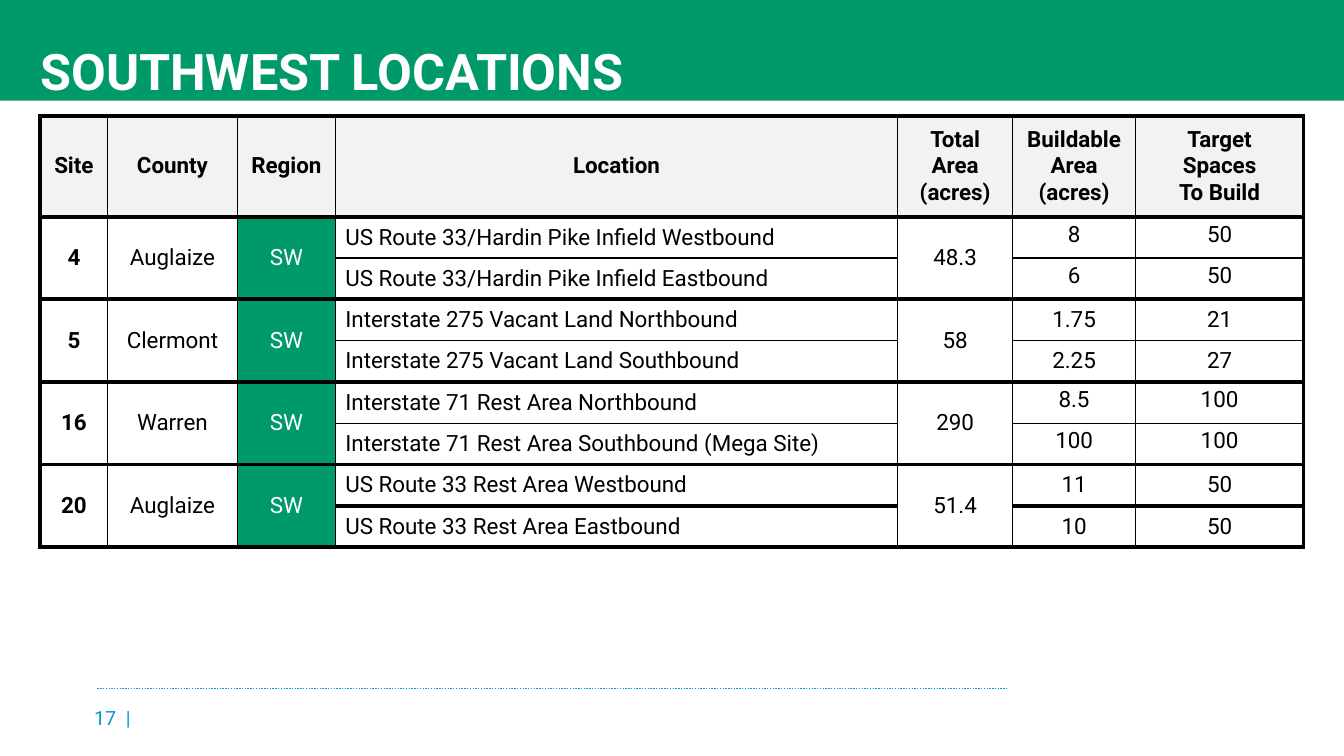
from dataclasses import dataclass

from lxml.etree import SubElement
from pptx import Presentation
from pptx.dml.color import RGBColor
from pptx.enum.dml import MSO_LINE
from pptx.enum.shapes import MSO_CONNECTOR, MSO_SHAPE
from pptx.enum.text import MSO_ANCHOR, PP_ALIGN
from pptx.oxml.ns import qn
from pptx.slide import Slide
from pptx.table import Table, _Cell
from pptx.text.text import TextFrame
from pptx.util import Inches, Pt

GREEN = RGBColor(0x00, 0x99, 0x69)
BLUE = RGBColor(0x00, 0x98, 0xD3)
GREY = RGBColor(0xF2, 0xF2, 0xF2)
BLACK = RGBColor(0, 0, 0)
WHITE = RGBColor(255, 255, 255)
FONT = "Roboto"
WIDE, HIGH = Inches(13.33), Inches(7.5)
COLS, ROWS = 40, 30
THIN, THICK = 1, 3

HEADS = ["Site", "County", "Region", "Location", "Total\nArea (acres)",
         "Buildable\nArea (acres)", "Target\nSpaces\nTo Build"]
SPANS = [2, 3.87, 2.91, 16.74, 3.42, 3.66, 5]
HEAD_ROWS, LOT_ROWS = 4, 1.64
SITE, REGION, PLACE, AREA, BUILD = 0, 2, 3, 4, 5
LAST = len(HEADS) - 1


@dataclass
class Lot:
    place: str
    acres: str
    spaces: str


@dataclass
class Site:
    number: str
    county: str
    area: str
    lots: list[Lot]
    anchor: MSO_ANCHOR = MSO_ANCHOR.MIDDLE
    split: int = THIN


SITES = [
    Site("4", "Auglaize", "48.3",
         [Lot("US Route 33/Hardin Pike Infield Westbound", "8", "50"),
          Lot("US Route 33/Hardin Pike Infield Eastbound", "6", "50")],
         anchor=MSO_ANCHOR.TOP),
    Site("5", "Clermont", "58",
         [Lot("Interstate 275 Vacant Land Northbound", "1.75", "21"),
          Lot("Interstate 275 Vacant Land Southbound", "2.25", "27")]),
    Site("16", "Warren", "290",
         [Lot("Interstate 71 Rest Area Northbound", "8.5", "100"),
          Lot("Interstate 71 Rest Area Southbound (Mega Site)", "100", "100")],
         anchor=MSO_ANCHOR.TOP),
    Site("20", "Auglaize", "51.4",
         [Lot("US Route 33 Rest Area Westbound", "11", "50"),
          Lot("US Route 33 Rest Area Eastbound", "10", "50")],
         split=THICK),
]


def across(cols: float) -> int:
    return round(WIDE * cols / COLS)


def down(rows: float) -> int:
    return round(HIGH * rows / ROWS)


def write(frame: TextFrame, text: str, size: int, color: RGBColor,
          bold: bool = False, align: PP_ALIGN = PP_ALIGN.LEFT) -> None:
    frame.text = text
    for para in frame.paragraphs:
        para.alignment = align
        for run in para.runs:
            font = run.font
            font.name, font.size, font.bold = FONT, Pt(size), bold
            font.color.rgb = color


def edge(cell: _Cell, col: int, top: int, base: int) -> None:
    """Draw the four borders; the table's outer sides are thick."""
    props = cell._tc.get_or_add_tcPr()
    left = THICK if col == SITE else THIN
    right = THICK if col == LAST else THIN
    sides = {"a:lnL": left, "a:lnR": right, "a:lnT": top, "a:lnB": base}
    for at, (tag, width) in enumerate(sides.items()):
        line = props.makeelement(qn(tag), {"w": str(Pt(width))})
        fill = SubElement(line, qn("a:solidFill"))
        SubElement(fill, qn("a:srgbClr"), val=str(BLACK))
        props.insert(at, line)


def fill_cell(cell: _Cell, col: int, text: str, head: bool = False,
              anchor: MSO_ANCHOR = MSO_ANCHOR.MIDDLE) -> None:
    green = col == REGION and not head
    align = PP_ALIGN.LEFT if col == PLACE and not head else PP_ALIGN.CENTER
    write(cell.text_frame, text, 16, WHITE if green else BLACK,
          head or col == SITE, align)
    cell.vertical_anchor = anchor
    if head or green:
        cell.fill.solid()
        cell.fill.fore_color.rgb = GREEN if green else GREY
    else:
        cell.fill.background()


def add_site(table: Table, row: int, site: Site) -> None:
    whole = {SITE: site.number, 1: site.county, REGION: "SW", AREA: site.area}
    end = row + len(site.lots) - 1
    for col, text in whole.items():
        for step in range(row, end + 1):
            edge(table.cell(step, col), col, THICK, THICK)
        table.cell(row, col).merge(table.cell(end, col))
        fill_cell(table.cell(row, col), col, text)
    for step, lot in enumerate(site.lots, row):
        top = THICK if step == row else site.split
        base = THICK if step == end else site.split
        parts = {PLACE: lot.place, BUILD: lot.acres, LAST: lot.spaces}
        for col, text in parts.items():
            cell = table.cell(step, col)
            anchor = MSO_ANCHOR.MIDDLE if col == PLACE else site.anchor
            fill_cell(cell, col, text, anchor=anchor)
            edge(cell, col, top, base)


def add_sites(slide: Slide) -> None:
    count = sum(len(site.lots) for site in SITES)
    frame = slide.shapes.add_table(
        count + 1, len(HEADS), across(1.2), down(4.6),
        across(sum(SPANS)), down(HEAD_ROWS + count * LOT_ROWS))
    table = frame.table
    table.horz_banding = False
    for col, span in zip(table.columns, SPANS):
        col.width = across(span)
    for at, row in enumerate(table.rows):
        row.height = down(LOT_ROWS if at else HEAD_ROWS)
    for col, text in enumerate(HEADS):
        fill_cell(table.cell(0, col), col, text, head=True)
        edge(table.cell(0, col), col, THICK, THICK)
    row = 1
    for site in SITES:
        add_site(table, row, site)
        row += len(site.lots)


def add_title(slide: Slide) -> None:
    band = slide.shapes.add_shape(MSO_SHAPE.RECTANGLE, 0, 0, WIDE, down(4))
    band.shadow.inherit = False
    band.fill.solid()
    band.fill.fore_color.rgb = GREEN
    band.line.fill.background()
    frame = band.text_frame
    frame.margin_left = frame.margin_right = across(1.2)
    frame.margin_top, frame.margin_bottom = down(0.4), 0
    frame.vertical_anchor = MSO_ANCHOR.BOTTOM
    write(frame, "SOUTHWEST LOCATIONS", 36, WHITE, bold=True)


def add_footer(slide: Slide) -> None:
    box = slide.shapes.add_textbox(
        across(2.8), down(27.68), across(1.56), down(1.6))
    frame = box.text_frame
    frame.margin_left = frame.margin_right = 0
    frame.margin_top = frame.margin_bottom = 0
    frame.word_wrap = False
    frame.vertical_anchor = MSO_ANCHOR.MIDDLE
    write(frame, "17\u00a0 |".replace("\u00a0", " "), 14, BLUE)
    rule = slide.shapes.add_connector(
        MSO_CONNECTOR.STRAIGHT, across(2.9), down(27.32),
        across(30), down(27.32))
    rule.line.color.rgb = BLUE
    rule.line.width = Pt(1)
    rule.line.dash_style = MSO_LINE.ROUND_DOT
    SubElement(rule._element.spPr, qn("a:effectLst"))


def main() -> None:
    deck = Presentation()
    deck.slide_width, deck.slide_height = WIDE, HIGH
    slide = deck.slides.add_slide(deck.slide_layouts[6])
    add_footer(slide)
    add_title(slide)
    add_sites(slide)
    deck.save("out.pptx")


if __name__ == "__main__":
    main()
